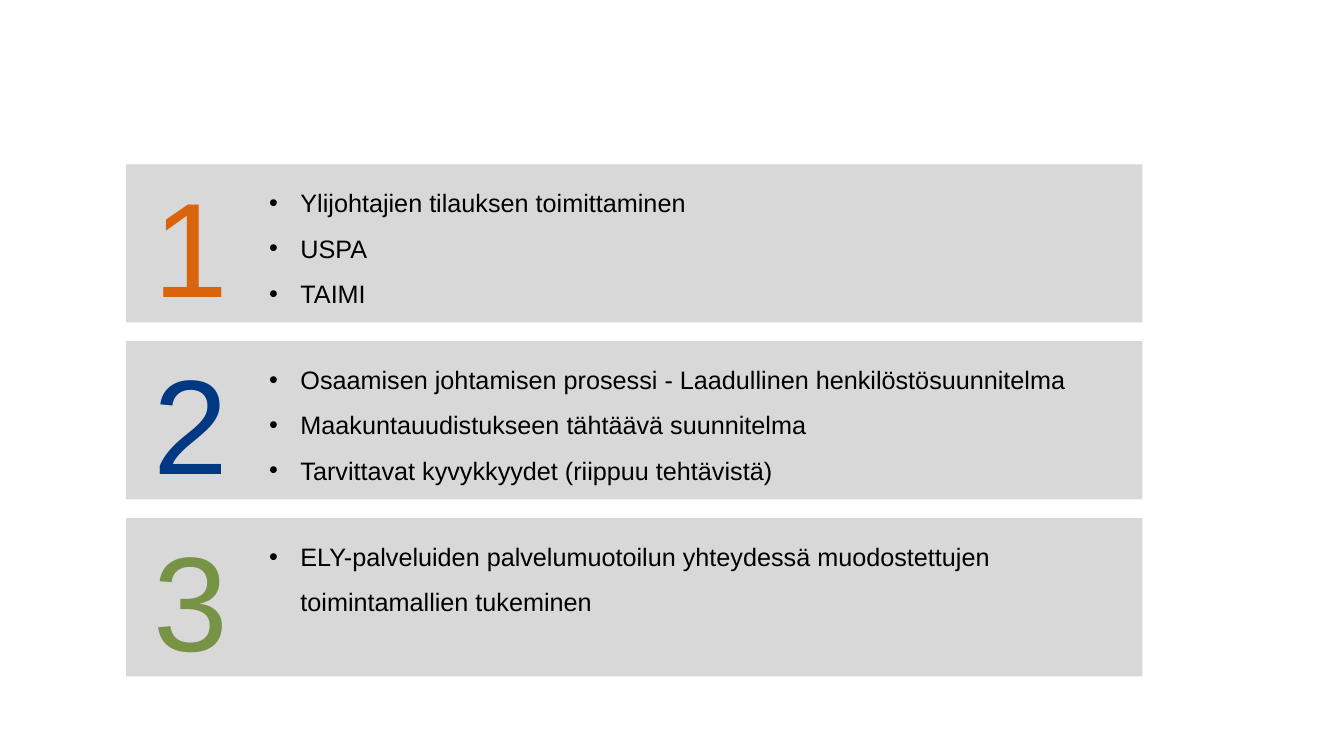
from lxml import etree
from pptx import Presentation
from pptx import util as u
from pptx.dml.color import RGBColor
from pptx.enum import shapes, text
from pptx.oxml.ns import qn

COLORS = {"panel": "D8D8D8", "ink": "000000", "orange": "D9640C",
          "blue": "003883", "green": "779346"}

# Number colour, list width and list items of each panel
PANELS = [
    ("orange", 9.15, ["Ylijohtajien tilauksen toimittaminen", "USPA", "TAIMI"]),
    ("blue", 9.15, ["Osaamisen johtamisen prosessi - Laadullinen henkilöstösuunnitelma",
                    "Maakuntauudistukseen tähtäävä suunnitelma",
                    "Tarvittavat kyvykkyydet (riippuu tehtävistä)"]),
    ("green", 8.43, ["ELY-palveluiden palvelumuotoilun yhteydessä muodostettujen "
                     "toimintamallien tukeminen"]),
]
FIRST_TOP, LAST_TOP = 1.63, 5.14
COMPARISON_LAYOUT = 5 - 1


class PanelSlide:
    font_name = "Arial"

    def __init__(self, page):
        self.page = page
        self.bodies = [box for box in page.placeholders
                       if box.placeholder_format.idx in (1, 2, 3, 4)]

    def set_values(self, target, **values):
        for name, value in values.items():
            setattr(target, name, value)

    def style(self, font, size, color):
        self.set_values(font, name=self.font_name, size=u.Pt(size), bold=False)
        font.color.rgb = RGBColor.from_string(COLORS[color])

    def frame(self, box):
        self.set_values(box.text_frame, word_wrap=True,
                        auto_size=text.MSO_AUTO_SIZE.NONE,
                        vertical_anchor=text.MSO_ANCHOR.TOP)
        return box.text_frame

    def panel(self, left, top, width, height):
        box = self.page.shapes.add_shape(
            shapes.MSO_SHAPE.RECTANGLE, *map(u.Inches, (left, top, width, height)))
        box.shadow.inherit = False
        box.fill.solid()
        box.fill.fore_color.rgb = RGBColor.from_string(COLORS["panel"])
        box.line.fill.background()

    def number(self, left, top, width, height, label, color):
        box = self.page.shapes.add_textbox(
            *map(u.Inches, (left, top, width, height)))
        para = self.frame(box).paragraphs[0]
        span = para.add_run()
        span.text = label
        self.style(span.font, 96, color)

    def bullets(self, left, top, width, height, items):
        box = self.bodies.pop(0)
        # Bring the list in front of its panel
        box.element.getparent().append(box.element)
        self.set_values(box, left=u.Inches(left), top=u.Inches(top),
                        width=u.Inches(width), height=u.Inches(height))
        frame = self.frame(box)
        frame.text = "\n".join(items)
        for para in frame.paragraphs:
            props = para._p.get_or_add_pPr()
            props.set("marL", str(u.Inches(0.31)))
            props.set("indent", str(-u.Inches(0.31)))
            etree.SubElement(props, qn("a:buFont"), typeface=self.font_name)
            etree.SubElement(props, qn("a:buChar"), char="•")
            self.set_values(para, line_spacing=1.5, space_before=u.Pt(0),
                            space_after=u.Pt(0), alignment=text.PP_ALIGN.LEFT)
            for span in para.runs:
                self.style(span.font, 18, "ink")

    def remove_empty(self):
        for box in list(self.page.placeholders):
            if not box.text_frame.text:
                box.element.getparent().remove(box.element)


def main():
    deck = Presentation()
    deck.slide_width, deck.slide_height = u.Inches(13.33), u.Inches(7.5)
    page = deck.slides.add_slide(deck.slide_layouts[COMPARISON_LAYOUT])
    slide = PanelSlide(page)

    # Three evenly spaced panels, each with a number and a list
    pitch = (LAST_TOP - FIRST_TOP) / (len(PANELS) - 1)
    for index, (color, list_width, items) in enumerate(PANELS):
        top = FIRST_TOP + index * pitch
        slide.panel(1.25, top, 10.08, 1.57)
        slide.number(1.42, top - 0.06, 1.32, 1.72, str(index + 1), color)
        list_height = 1.46 if len(items) > 1 else 1.01
        slide.bullets(2.57, top + 0.03, list_width, list_height, items)

    slide.remove_empty()
    deck.save("out.pptx")


if __name__ == "__main__":
    main()
